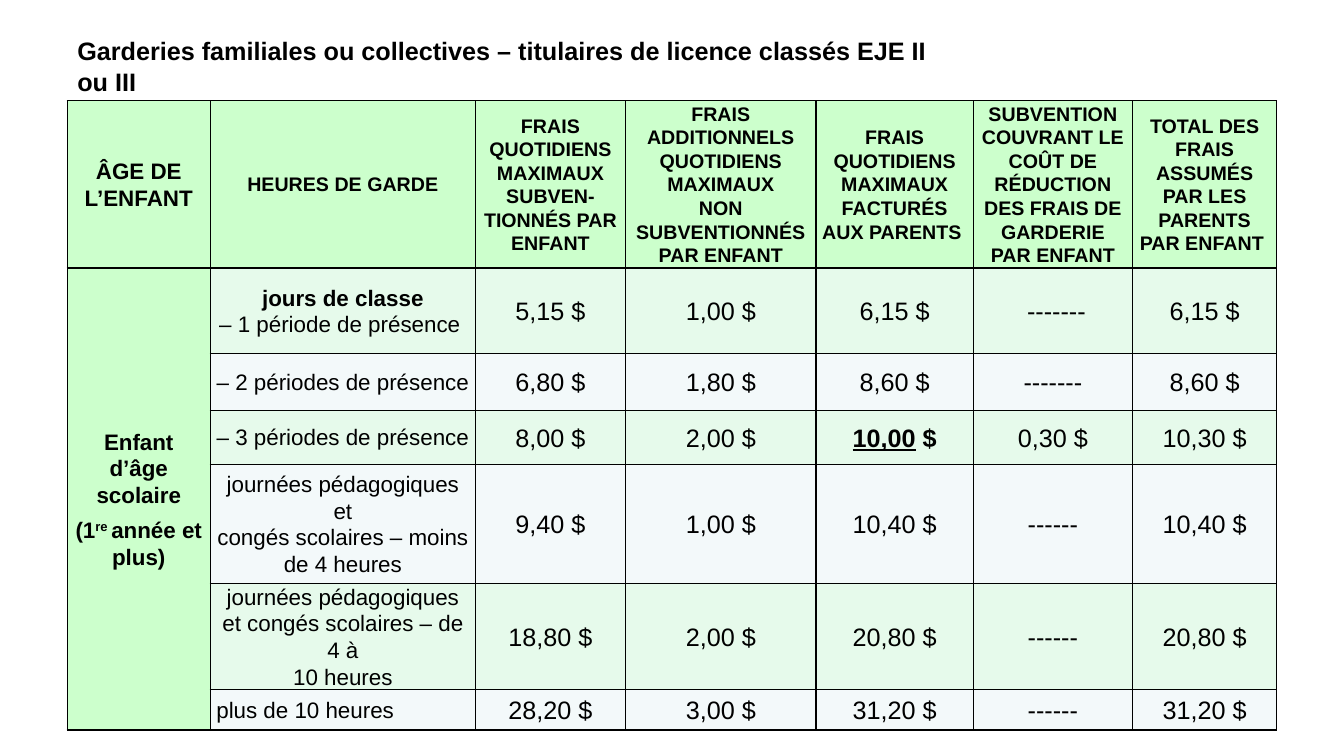
from copy import deepcopy

from pptx import Presentation
from pptx.dml.color import RGBColor
from pptx.enum.text import MSO_ANCHOR, MSO_AUTO_SIZE, PP_ALIGN
from pptx.oxml import parse_xml
from pptx.oxml.ns import nsdecls
from pptx.util import Inches, Pt

LEFT, CENTER = PP_ALIGN.LEFT, PP_ALIGN.CENTER
TOP, MIDDLE = MSO_ANCHOR.TOP, MSO_ANCHOR.MIDDLE
NO_FIT = MSO_AUTO_SIZE.NONE

BLACK = RGBColor(0x00, 0x00, 0x00)
HEADER_GREEN = RGBColor(0xCC, 0xFF, 0xCC)
ROW_FILLS = (RGBColor(0xE6, 0xFA, 0xEB), RGBColor(0xF3, 0xF9, 0xFA))
GRID_COLUMNS = 40

TITLE = "Garderies familiales ou collectives – titulaires de licence classés EJE II ou III"
COLUMN_SHARES = (1.42, 2.63, 1.49, 1.89, 1.56, 1.58, 1.43)
ROW_SHARES = (1.66, 0.85, 0.56, 0.54, 1.18, 0.72, 0.4)
HEADERS = (
    "ÂGE DE L’ENFANT",
    "HEURES DE GARDE",
    "FRAIS QUOTIDIENS MAXIMAUX SUBVEN-TIONNÉS PAR ENFANT",
    "FRAIS ADDITIONNELS\nQUOTIDIENS MAXIMAUX\nNON SUBVENTIONNÉS PAR ENFANT",
    "FRAIS QUOTIDIENS MAXIMAUX FACTURÉS AUX PARENTS ",
    "SUBVENTION COUVRANT LE COÛT DE RÉDUCTION DES FRAIS DE GARDERIE PAR ENFANT",
    "TOTAL DES FRAIS ASSUMÉS PAR LES PARENTS PAR ENFANT ",
)
AGE_GROUP = (
    [("Enfant d’âge", {})],
    [("scolaire", {})],
    [("(1", {}), ("re ", {"raised": True}), ("année et plus)", {})],
)
# Hours of care, followed by the five amounts
FEES = (
    ([("jours de classe\n", {"bold": True}), ("– 1 période de présence ", {})],
     "5,15 $", "1,00 $", "6,15 $", " -------", "6,15 $"),
    ("– 2 périodes de présence ",
     "6,80 $", "1,80 $", "8,60 $", "-------", "8,60 $"),
    ("– 3 périodes de présence",
     "8,00 $", "2,00 $",
     [("10,00", {"bold": True, "underline": True}), (" $", {"bold": True})],
     "0,30 $", "10,30 $"),
    ("journées pédagogiques et\ncongés scolaires – moins\nde 4 heures",
     "9,40 $", "1,00 $", "10,40 $", "------", "10,40 $"),
    ("journées pédagogiques et congés scolaires – de 4 à\n10 heures",
     "18,80 $", "2,00 $", "20,80 $", "------", "20,80 $"),
    ("plus de 10 heures",
     "28,20 $", "3,00 $", "31,20 $", "------", "31,20 $"),
)


def add_text(para, text, size=18, bold=False, underline=False, raised=False):
    """Add text to a paragraph; each newline becomes a line break."""
    span = None
    for number, line in enumerate(text.split("\n")):
        if number:
            para.add_line_break()
            para._p[-1].append(deepcopy(span._r.rPr))
        if not line:
            continue
        span = para.add_run()
        span.text = line
        font = span.font
        font.name, font.size, font.bold = "Arial", Pt(size), bold
        font.color.rgb = BLACK
        if underline:
            font.underline = True
        if raised:
            span._r.get_or_add_rPr().set("baseline", "30000")


class FeePage:
    """Holds the page and its grid, and draws each kind of element."""

    def __init__(self, deck):
        self.page = deck.slides.add_slide(deck.slide_layouts[5])
        self.unit = deck.slide_width / GRID_COLUMNS

    def grid(self, count):
        return round(self.unit * count)

    def title(self, text, left, top, width, height):
        box = self.page.shapes.title
        box.left, box.top = self.grid(left), self.grid(top)
        box.width, box.height = self.grid(width), self.grid(height)
        frame = box.text_frame
        frame.word_wrap, frame.auto_size = True, NO_FIT
        frame.vertical_anchor, frame.margin_top = TOP, Inches(0.02)
        para = frame.paragraphs[0]
        para.alignment = LEFT
        add_text(para, text, bold=True)

    def table(self, left, top, width, height):
        frame = self.page.shapes.add_table(
            len(ROW_SHARES), len(COLUMN_SHARES), self.grid(left),
            self.grid(top), self.grid(width), self.grid(height))
        table = frame.table
        table.first_row = table.horz_banding = False
        for column, share in zip(table.columns, COLUMN_SHARES):
            column.width = self.grid(width * share / sum(COLUMN_SHARES))
        for row, share in zip(table.rows, ROW_SHARES):
            row.height = self.grid(height * share / sum(ROW_SHARES))
        return table

    def style_cell(self, cell, color):
        cell.margin_left = cell.margin_right = Inches(0.06)
        cell.margin_top = cell.margin_bottom = 0
        cell.vertical_anchor = MIDDLE
        properties = cell._tc.get_or_add_tcPr()
        for side in ("lnL", "lnR", "lnT", "lnB"):
            properties.append(parse_xml(
                f'<a:{side} {nsdecls("a")} w="{Pt(1)}"><a:solidFill>'
                f'<a:srgbClr val="{BLACK}"/></a:solidFill></a:{side}>'))
        cell.fill.solid()
        cell.fill.fore_color.rgb = color

    def fill_cell(self, cell, paragraphs, align=CENTER, **style):
        frame = cell.text_frame
        for number, spans in enumerate(paragraphs):
            para = frame.add_paragraph() if number else frame.paragraphs[0]
            para.alignment, para.line_spacing = align, 1.07
            # The first two lines of the age group stay together
            joined = number == 0 and len(paragraphs) > 1
            para.space_after = Pt(0 if joined else 6)
            if isinstance(spans, str):
                spans = [(spans, {})]
            for text, extra in spans:
                add_text(para, text, **{**style, **extra})


def main():
    deck = Presentation()
    deck.slide_width, deck.slide_height = Inches(13.33), Inches(7.5)
    fees = FeePage(deck)

    # Title
    fees.title(TITLE, left=2, top=1, width=26.34, height=2.79)

    # Table frame, borders and fills
    table = fees.table(left=2, top=3, width=36, height=17.73)
    for row in range(len(ROW_SHARES)):
        for column in range(len(COLUMN_SHARES)):
            green = row == 0 or column == 0
            color = HEADER_GREEN if green else ROW_FILLS[(row - 1) % 2]
            fees.style_cell(table.cell(row, column), color)

    # Header row
    for column, header in enumerate(HEADERS):
        fees.fill_cell(table.cell(0, column), [header],
                       size=14 if column else 16, bold=True)

    # Age group, spanning all fee rows
    age_cell = table.cell(1, 0)
    age_cell.merge(table.cell(len(FEES), 0))
    fees.fill_cell(age_cell, AGE_GROUP, size=16, bold=True)

    # Hours and amounts
    for row, (hours, *amounts) in enumerate(FEES, start=1):
        align = LEFT if row == len(FEES) else CENTER
        fees.fill_cell(table.cell(row, 1), [hours], align=align, size=16)
        for column, amount in enumerate(amounts, start=2):
            fees.fill_cell(table.cell(row, column), [amount], size=18)

    deck.save("out.pptx")


if __name__ == "__main__":
    main()
